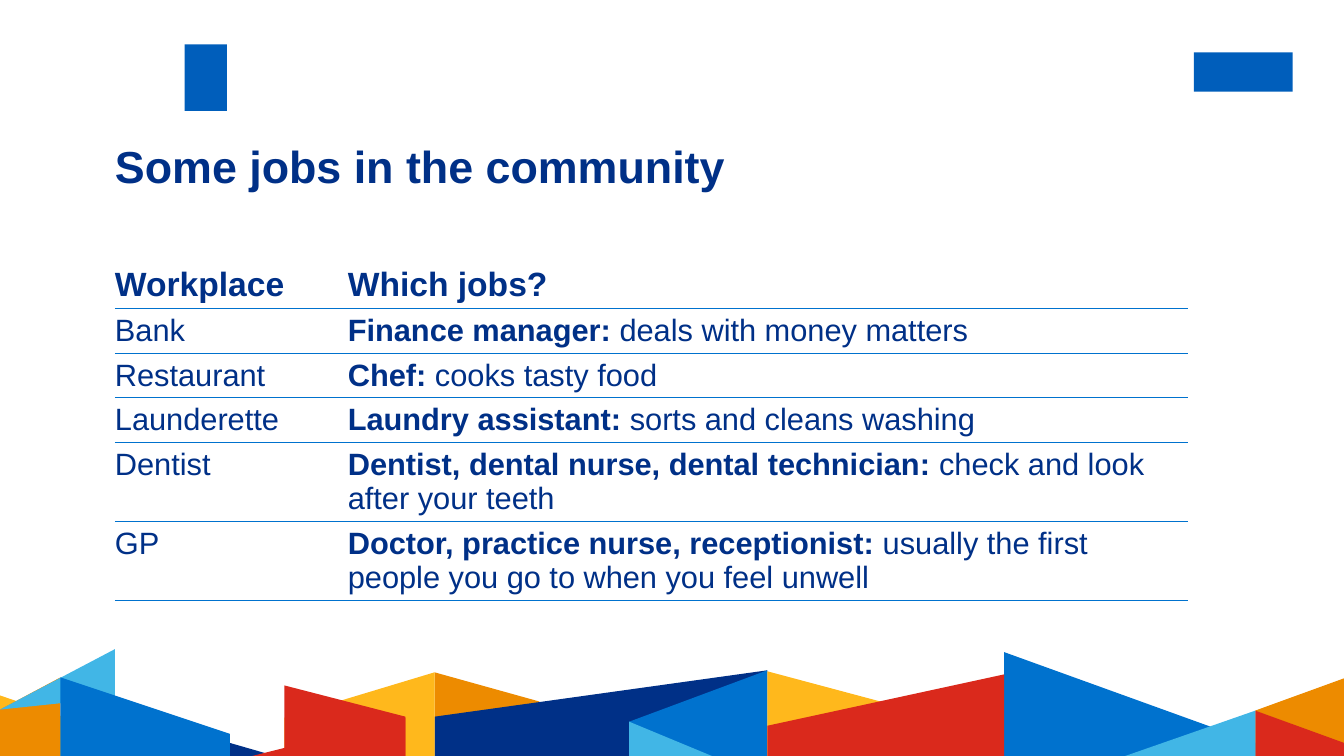
from lxml import etree
from pptx import Presentation
from pptx.dml.color import RGBColor
from pptx.enum.shapes import MSO_SHAPE
from pptx.enum.text import MSO_ANCHOR, MSO_AUTO_SIZE, PP_ALIGN
from pptx.oxml.ns import qn
from pptx.util import Inches, Pt

RECTANGLE = MSO_SHAPE.RECTANGLE
TOP = MSO_ANCHOR.TOP
NO_AUTOFIT = MSO_AUTO_SIZE.NONE
LEFT = PP_ALIGN.LEFT

FONT = "Arial"
NAVY = "003087"
BLUE = "0072CE"
SKY = "41B6E6"
RED = "DA291C"
YELLOW = "FFB81C"
ORANGE = "ED8B00"
LOGO_BLUE = "005EBB"
NO_GRID_STYLE = "{2D5ABB26-0587-4C30-8999-92F81FD0307C}"

SLIDE_WIDTH, SLIDE_HEIGHT = 13.33, 7.5
CONTENT_LEFT, CONTENT_WIDTH = 1.14, 10.64

# Workplace, job titles, what they do
JOBS = [
    ("Bank", "Finance manager:", "deals with money matters"),
    ("Restaurant", "Chef:", "cooks tasty food"),
    ("Launderette", "Laundry assistant:", "sorts and cleans washing"),
    ("Dentist", "Dentist, dental nurse, dental technician:",
     "check and look after your teeth"),
    ("GP", "Doctor, practice nurse, receptionist:",
     "usually the first people you go to when you feel unwell"),
]
COLUMN_WIDTHS = [2.31, 8.33]
ROW_HEIGHTS = [0.47, 0.44, 0.44, 0.44, 0.78, 0.78]

# Skyline facets from back to front: colour, then corners as
# (distance from the left, height above the bottom edge)
FACETS = [
    (ORANGE, [(4.31, 0), (4.31, 0.83), (5.35, 0.54), (5.35, 0.29)]),
    (NAVY, [(4.31, 0), (4.31, 0.39), (7.61, 0.85), (7.61, 0)]),
    (ORANGE, [(12.45, 0), (12.45, 0.45), (13.33, 0.77), (13.33, 0)]),
    (YELLOW, [(0, 0), (0, 0.6), (0.95, 0.28), (0.95, 0)]),
    (YELLOW, [(2.82, 0), (2.82, 0.38), (4.31, 0.83), (4.31, 0)]),
    (ORANGE, [(0, 0), (0, 0.46), (0.6, 0.78), (0.6, 0)]),
    (RED, [(2.82, 0), (2.82, 0.7), (4.02, 0.39), (4.02, 0)]),
    (NAVY, [(1.76, 0), (1.76, 0.28), (2.73, 0)]),
    (RED, [(2.5, 0), (4.02, 0.38), (4.02, 0)]),
    (SKY, [(0, 0.46), (1.14, 1.06), (1.14, 0.58)]),
    (BLUE, [(0.6, 0), (0.6, 0.78), (2.28, 0.22), (2.28, 0)]),
    (BLUE, [(6.24, 0), (6.24, 0.34), (7.61, 0.85), (7.61, 0)]),
    (SKY, [(6.24, 0), (6.24, 0.34), (7.06, 0)]),
    (BLUE, [(9.96, 0), (9.96, 1.03), (12.45, 0.13), (12.45, 0)]),
    (RED, [(12.45, 0), (12.45, 0.45), (13.33, 0.13), (13.33, 0)]),
    (SKY, [(11.16, 0), (12.45, 0.45), (12.45, 0)]),
    (YELLOW, [(7.61, 0), (7.61, 0.84), (8.92, 0.49), (8.92, 0)]),
    (RED, [(7.61, 0), (7.61, 0.3), (9.96, 0.81), (9.96, 0)]),
]


def color(hex_string):
    return RGBColor.from_string(hex_string)


def paint(shape, hex_string):
    shape.shadow.inherit = False
    shape.fill.solid()
    shape.fill.fore_color.rgb = color(hex_string)
    shape.line.fill.background()


def add_run(paragraph, text, size, bold):
    run = paragraph.add_run()
    run.text = text
    run.font.name = FONT
    run.font.size = Pt(size)
    run.font.bold = bold
    run.font.color.rgb = color(NAVY)


def add_logo_block(slide, left, top, width, height):
    block = slide.shapes.add_shape(
        RECTANGLE, Inches(left), Inches(top), Inches(width), Inches(height))
    paint(block, LOGO_BLUE)


def add_skyline(slide, left, bottom):
    for hex_string, corners in FACETS:
        points = [(Inches(left + x), Inches(bottom - y)) for x, y in corners]
        builder = slide.shapes.build_freeform(*points[0])
        builder.add_line_segments(points[1:], close=True)
        paint(builder.convert_to_shape(), hex_string)


def add_title(slide, left, top, width, height):
    title = slide.shapes.title
    title.left, title.top = Inches(left), Inches(top)
    title.width, title.height = Inches(width), Inches(height)
    frame = title.text_frame
    frame.margin_left = frame.margin_right = 0
    frame.margin_top = frame.margin_bottom = 0
    frame.vertical_anchor = TOP
    frame.auto_size = NO_AUTOFIT
    frame.word_wrap = True
    paragraph = frame.paragraphs[0]
    paragraph.alignment = LEFT
    paragraph.line_spacing = 0.9
    add_run(paragraph, "Some jobs in the community", 32, True)


def underline_cell(cell):
    properties = cell._tc.get_or_add_tcPr()
    border = etree.Element(qn("a:lnB"), w=str(Pt(1)))
    fill = etree.SubElement(border, qn("a:solidFill"))
    etree.SubElement(fill, qn("a:srgbClr"), val=BLUE)
    properties.insert(0, border)


def fill_cell(cell, runs, size, right_margin):
    cell.margin_left = 0
    cell.margin_right = Inches(right_margin)
    cell.margin_top = cell.margin_bottom = Inches(0.05)
    cell.vertical_anchor = TOP
    cell.fill.background()
    underline_cell(cell)
    for text, bold in runs:
        add_run(cell.text_frame.paragraphs[0], text, size, bold)


def add_jobs_table(slide, left, top, width):
    frame = slide.shapes.add_table(
        len(ROW_HEIGHTS), len(COLUMN_WIDTHS), Inches(left), Inches(top),
        Inches(width), Inches(sum(ROW_HEIGHTS)))
    table = frame.table
    table.first_row = table.horz_banding = False
    table._tbl.tblPr.find(qn("a:tableStyleId")).text = NO_GRID_STYLE
    for column, column_width in zip(table.columns, COLUMN_WIDTHS):
        column.width = Inches(column_width)
    for row, row_height in zip(table.rows, ROW_HEIGHTS):
        row.height = Inches(row_height)

    # Header row
    fill_cell(table.cell(0, 0), [("Workplace", True)], 24, 0.1)
    fill_cell(table.cell(0, 1), [("Which jobs?", True)], 24, 0)

    # One row for each workplace
    for index, (workplace, job, duty) in enumerate(JOBS, start=1):
        fill_cell(table.cell(index, 0), [(workplace, False)], 22, 0.1)
        fill_cell(table.cell(index, 1),
                  [(job + " ", True), (duty, False)], 22, 0)


def main():
    presentation = Presentation()
    presentation.slide_width = Inches(SLIDE_WIDTH)
    presentation.slide_height = Inches(SLIDE_HEIGHT)
    title_only = presentation.slide_layouts[5]
    slide = presentation.slides.add_slide(title_only)

    add_logo_block(slide, 1.83, 0.44, 0.42, 0.66)
    add_logo_block(slide, 11.84, 0.52, 0.98, 0.39)
    add_skyline(slide, 0, SLIDE_HEIGHT)
    add_jobs_table(slide, CONTENT_LEFT, 2.59, CONTENT_WIDTH)
    add_title(slide, CONTENT_LEFT, 1.44, CONTENT_WIDTH, 0.6)

    presentation.save("out.pptx")


if __name__ == "__main__":
    main()
